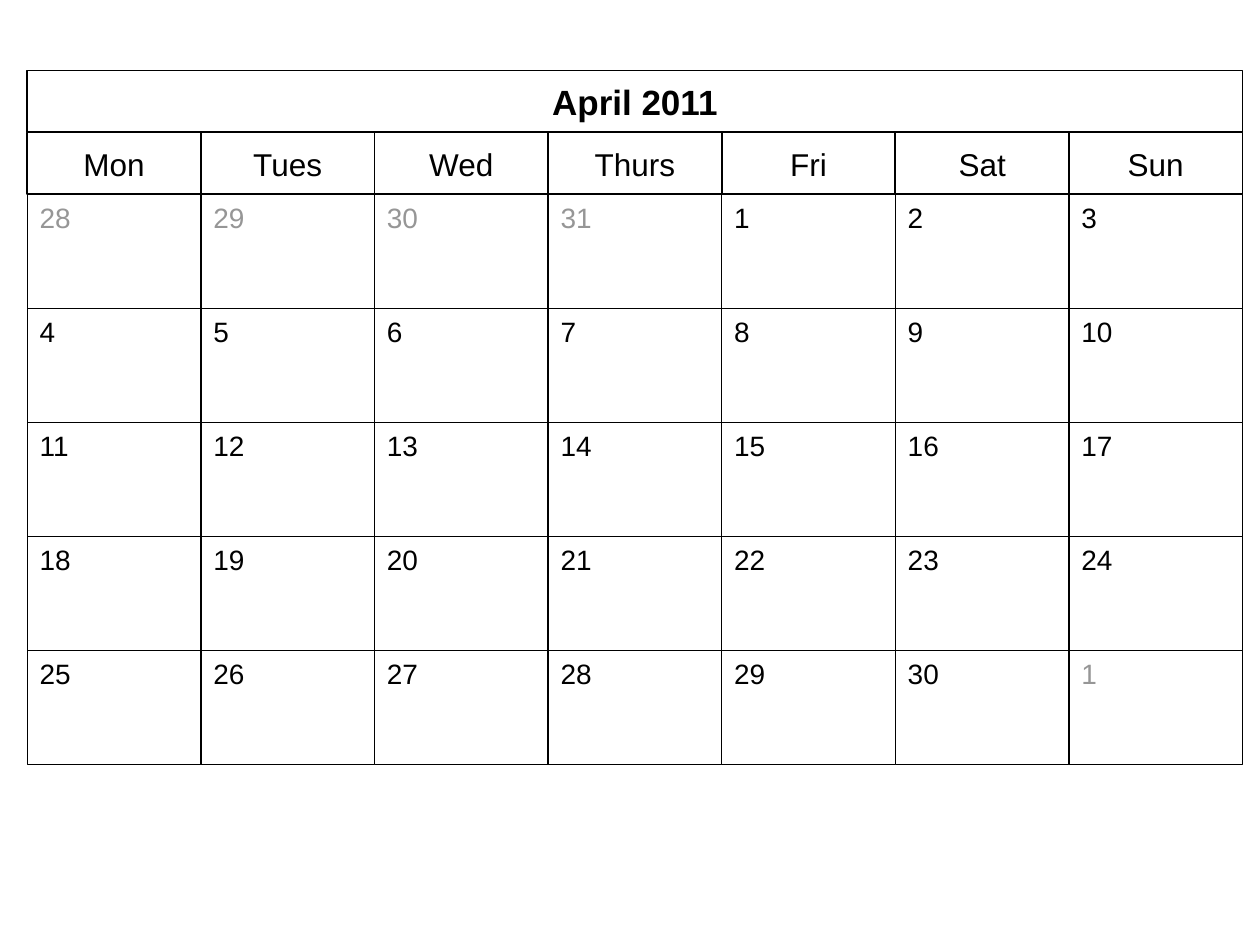
from dataclasses import dataclass

from pptx import Presentation
from pptx.dml.color import RGBColor
from pptx.enum.shapes import MSO_SHAPE
from pptx.enum.text import MSO_ANCHOR, PP_ALIGN
from pptx.util import Cm, Pt


@dataclass(frozen=True)
class Theme:
    font: str = "Arial"
    paper: RGBColor = RGBColor(0xFF, 0xFF, 0xFF)
    ink: RGBColor = RGBColor(0x00, 0x00, 0x00)
    muted: RGBColor = RGBColor(0x96, 0x96, 0x96)
    title_size: int = 20
    weekday_size: int = 18
    day_size: int = 16
    heading_line: float = 1
    day_line: float = 0.75


@dataclass(frozen=True)
class Box:
    """A region of the slide, in centimetres."""
    left: float
    top: float
    width: float
    height: float

    def cell(self, row, column, rows, columns):
        width, height = self.width / columns, self.height / rows
        return Box(self.left + column * width, self.top + row * height, width, height)


THEME = Theme()
TITLE = "April 2011"
WEEKDAYS = ["Mon", "Tues", "Wed", "Thurs", "Fri", "Sat", "Sun"]
DAYS_BEFORE = [28, 29, 30, 31]
DAYS_IN_MONTH = 30
DAYS_AFTER = [1]
WEEKS = 5

LEFT, TOP, WIDTH = 0.55, 1.42, 24.5
HEADING_HEIGHT, WEEK_HEIGHT = 1.25, 2.3


def add_cell(page, box, text, size, line, color=THEME.ink, bold=False):
    """Draw one outlined cell and return its text frame."""
    cell = page.shapes.add_shape(
        MSO_SHAPE.RECTANGLE, Cm(box.left), Cm(box.top), Cm(box.width), Cm(box.height))
    cell.shadow.inherit = False
    cell.fill.solid()
    cell.fill.fore_color.rgb = THEME.paper
    cell.line.color.rgb = THEME.ink
    cell.line.width = Pt(line)
    frame = cell.text_frame
    frame.word_wrap = True
    frame.vertical_anchor = MSO_ANCHOR.TOP
    frame.text = text
    para = frame.paragraphs[0]
    para.alignment = PP_ALIGN.LEFT
    font = para.runs[0].font
    font.name, font.size, font.bold = THEME.font, Pt(size), bold
    font.color.rgb = color
    return frame


def add_heading(page, box, text, size, bold=False):
    frame = add_cell(page, box, text, size, THEME.heading_line, bold=bold)
    frame.margin_top = frame.margin_bottom = Cm(0.05)
    frame.vertical_anchor = MSO_ANCHOR.MIDDLE
    frame.paragraphs[0].alignment = PP_ALIGN.CENTER


def add_weekdays(page, box):
    for column, name in enumerate(WEEKDAYS):
        add_heading(page, box.cell(0, column, 1, len(WEEKDAYS)), name, THEME.weekday_size)


def add_days(page, box):
    days = [(day, THEME.muted) for day in DAYS_BEFORE]
    days += [(day, THEME.ink) for day in range(1, DAYS_IN_MONTH + 1)]
    days += [(day, THEME.muted) for day in DAYS_AFTER]
    for index, (day, color) in enumerate(days):
        week, weekday = divmod(index, len(WEEKDAYS))
        add_cell(page, box.cell(week, weekday, WEEKS, len(WEEKDAYS)), str(day),
                 THEME.day_size, THEME.day_line, color)


def main():
    deck = Presentation()
    deck.slide_width, deck.slide_height = Cm(25.4), Cm(19.05)
    page = deck.slides.add_slide(deck.slide_layouts[6])
    weekdays_top = TOP + HEADING_HEIGHT
    days_top = weekdays_top + HEADING_HEIGHT
    add_weekdays(page, Box(LEFT, weekdays_top, WIDTH, HEADING_HEIGHT))
    add_heading(page, Box(LEFT, TOP, WIDTH, HEADING_HEIGHT), TITLE, THEME.title_size, bold=True)
    add_days(page, Box(LEFT, days_top, WIDTH, WEEKS * WEEK_HEIGHT))
    deck.save("out.pptx")


if __name__ == "__main__":
    main()
